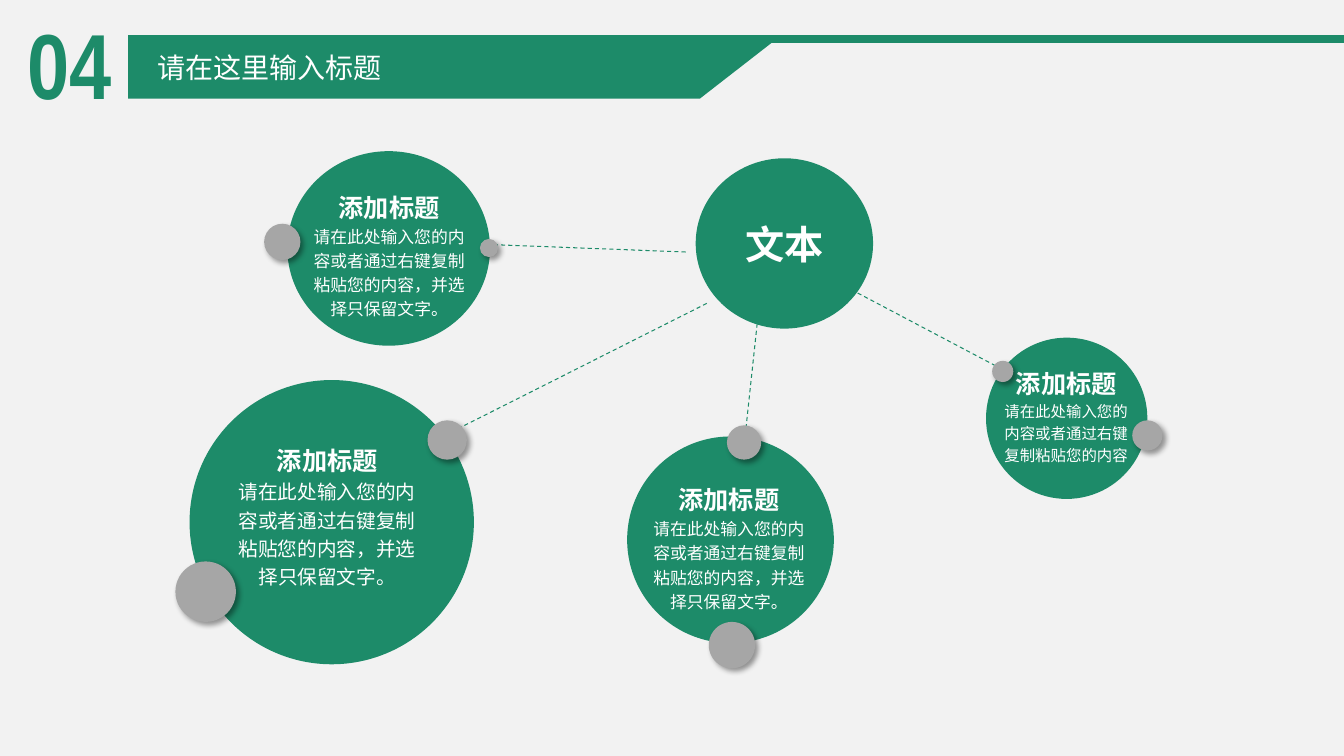
import pptx
import pptx.dml.color
import pptx.enum.dml
import pptx.enum.shapes
import pptx.enum.text
import pptx.oxml
import pptx.oxml.ns
import pptx.util

PX = 9144  # 100 px to the inch
GREEN, GRAY, WHITE, PAPER = "1D8B69", "A6A6A6", "FFFFFF", "F2F2F2"
CJK_FONT = "Noto Sans CJK SC"
NS = pptx.oxml.ns.nsdecls("a")
CENTER = pptx.enum.text.PP_ALIGN.CENTER
LEFT = pptx.enum.text.PP_ALIGN.LEFT
MIDDLE = pptx.enum.text.MSO_ANCHOR.MIDDLE
TOP = pptx.enum.text.MSO_ANCHOR.TOP

HEADING = "添加标题"
SHORT_BODY = "请在此处输入您的内容或者通过右键复制粘贴您的内容"
BODY = SHORT_BODY + "，并选择只保留文字。"

# Circle box, text box, body size, body
TOPICS = [
    ((285, 150, 201, 193), (296, 180, 180, 143), 12, BODY),
    ((188, 377, 282, 282), (225, 431, 199, 188), 14, BODY),
    ((622, 433, 205, 205), (633, 470, 180, 143), 12, BODY),
    ((978, 335, 160, 160), (983, 354, 149, 113), 11, SHORT_BODY),
]
# From the hub to each topic: x1, y1, x2, y2
SPOKES = [(680, 250, 470, 242), (701, 301, 439, 433),
          (751, 321, 739, 433), (819, 274, 999, 369)]
# Left, top, diameter
BEADS = [(262, 222, 36), (174, 557, 60), (703, 617, 46), (1123, 417, 30),
         (476, 237, 18), (424, 417, 39), (721, 422, 34), (984, 358, 21)]


def px(*lengths):
    return [pptx.util.Emu(length * PX) for length in lengths]


def rgb(hex_color):
    return pptx.dml.color.RGBColor.from_string(hex_color)


def paint(shape, color):
    shape.shadow.inherit = False
    shape.fill.solid()
    shape.fill.fore_color.rgb = rgb(color)
    shape.line.fill.background()


def write(shape, lines, font, color, align=LEFT, anchor=TOP, spacing=1.0):
    """Fill a shape with lines given as (text, size, bold)."""
    frame = shape.text_frame
    frame.text = "\n".join(text for text, _, _ in lines)
    frame.word_wrap = True
    frame.vertical_anchor = anchor
    for paragraph, (_, size, bold) in zip(frame.paragraphs, lines):
        paragraph.alignment = align
        paragraph.line_spacing = spacing
        for run in paragraph.runs:
            run.font.size = pptx.util.Pt(size)
            run.font.bold = bold
            run.font.name = font
            run.font.color.rgb = rgb(color)
            run.font._element.append(pptx.oxml.parse_xml(
                f'<a:ea {NS} typeface="{CJK_FONT}"/>'))


def add_line(slide, ends, width, dashed=False):
    line = slide.shapes.add_connector(
        pptx.enum.shapes.MSO_CONNECTOR.STRAIGHT, *px(*ends))
    line.line.color.rgb = rgb(GREEN)
    line.line.width = pptx.util.Pt(width)
    if dashed:
        line.line.dash_style = pptx.enum.dml.MSO_LINE.DASH
    line.element.spPr.append(pptx.oxml.parse_xml(f"<a:effectLst {NS}/>"))


def add_circle(shapes, box, color):
    circle = shapes.add_shape(pptx.enum.shapes.MSO_SHAPE.OVAL, *px(*box))
    paint(circle, color)
    return circle


def add_bead(slide, left, top, diameter):
    """Gray ball with a soft shadow to the lower right."""
    bead = add_circle(slide.shapes, (left, top, diameter, diameter), GRAY)
    effects = bead.element.spPr.find(pptx.oxml.ns.qn("a:effectLst"))
    effects.append(pptx.oxml.parse_xml(
        f'<a:outerShdw {NS} blurRad="50800" dist="38100" dir="2700000" '
        'algn="tl" rotWithShape="0"><a:srgbClr val="000000">'
        '<a:alpha val="40000"/></a:srgbClr></a:outerShdw>'))


def add_topic(slide, circle_box, text_box, body_size, body):
    topic = slide.shapes.add_group_shape()
    add_circle(topic.shapes, circle_box, GREEN)
    caption = topic.shapes.add_textbox(*px(*text_box))
    write(caption, [(HEADING, 18, True), (body, body_size, False)],
          "Arial", WHITE, CENTER, spacing=1.2)


def add_header(slide, left, top, width, height):
    """Slanted band with a rule running to the right edge, number and title."""
    right, bottom, slant = left + width, top + height, 81
    add_line(slide, (678, top + 4, 1333, top + 4), 6)
    outline = slide.shapes.build_freeform(left, top, scale=PX)
    outline.add_line_segments(
        [(right, top), (right - slant, bottom), (left, bottom)], close=True)
    paint(outline.convert_to_shape(), GREEN)

    number = slide.shapes.add_textbox(*px(left - 110, top - 33, 159, 121))
    write(number, [("04", 66, True)], "Arial Narrow", GREEN)

    title = slide.shapes.title
    title.left, title.top, title.width, title.height = px(
        left + 19, top + 10, 334, 44)
    write(title, [("请在这里输入标题", 20, False)], CJK_FONT, WHITE)
    title.element.getparent().append(title.element)  # in front of the band


def add_mind_map(slide):
    for ends in SPOKES:
        add_line(slide, ends, 0.75, dashed=True)
    hub = add_circle(slide.shapes, (690, 157, 176, 169), GREEN)
    write(hub, [("文本", 28, True)], "Arial", WHITE, CENTER, MIDDLE)
    for topic in TOPICS:
        add_topic(slide, *topic)
    for bead in BEADS:
        add_bead(slide, *bead)


def main():
    deck = pptx.Presentation()
    deck.slide_width, deck.slide_height = px(1333, 750)
    slide = deck.slides.add_slide(deck.slide_layouts.get_by_name("Title Only"))
    slide.background.fill.solid()
    slide.background.fill.fore_color.rgb = rgb(PAPER)
    add_header(slide, 127, 35, 648, 63)
    add_mind_map(slide)
    deck.save("out.pptx")


if __name__ == "__main__":
    main()
